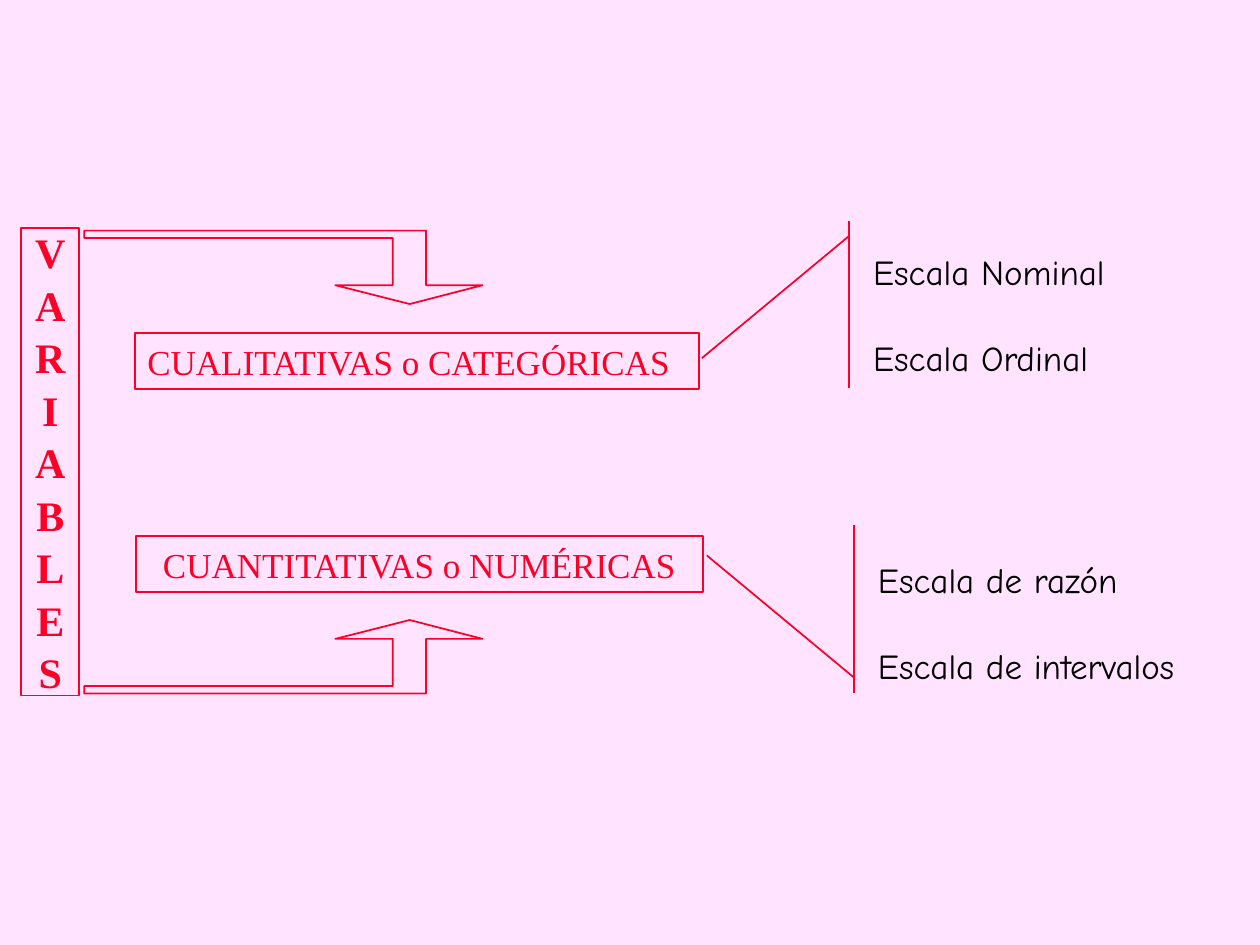
"""Builds a slide that sorts variables by kind and measurement scale."""
from pptx import Presentation
from pptx.dml.color import RGBColor
from pptx.enum.shapes import MSO_SHAPE as Preset
from pptx.enum.text import MSO_ANCHOR as Anchor, PP_ALIGN as Align
from pptx.util import Cm, Pt

COLORS = {"background": "FFE3FF", "red": "FC0128", "black": "000000"}
SERIF = "Times New Roman"
SCRIPT = "Comic Neue"


def color(name):
    return RGBColor.from_string(COLORS[name])


def outline(shape):
    shape.shadow.inherit = False
    shape.fill.background()
    shape.line.color.rgb = color("red")
    shape.line.width = Pt(1)


def add_outlined(slide, preset, box):
    shape = slide.shapes.add_shape(preset, *(Cm(length) for length in box))
    outline(shape)
    return shape


def write(shape, lines, font, size, ink, align, bold=False, gap=0):
    frame = shape.text_frame
    for index, line in enumerate(lines):
        paragraph = frame.paragraphs[0] if index == 0 else frame.add_paragraph()
        paragraph.alignment = align
        paragraph.space_before = Pt(gap if index else 0)
        run = paragraph.add_run()
        run.text = line
        run.font.name = font
        run.font.size = Pt(size)
        run.font.bold = bold
        run.font.color.rgb = color(ink)


def add_box(slide, box, lines, size, align, bold=False, gap=0):
    shape = add_outlined(slide, Preset.RECTANGLE, box)
    shape.text_frame.word_wrap = False
    shape.text_frame.vertical_anchor = Anchor.MIDDLE
    write(shape, lines, SERIF, size, "red", align, bold, gap)


def add_callout(slide, box, adjustments, inset, lines):
    shape = add_outlined(slide, Preset.LINE_CALLOUT_1_ACCENT_BAR, box)
    for index, value in enumerate(adjustments):
        shape.adjustments[index] = value
    frame = shape.text_frame
    frame.word_wrap = True
    frame.vertical_anchor = Anchor.TOP
    frame.margin_top = Cm(inset)
    write(shape, lines, SCRIPT, 20, "black", Align.JUSTIFY, gap=25)


def add_bent_arrow(slide, tip, direction):
    """Draws an elbow arrow from its tip; direction 1 points up, -1 down."""
    offsets = [(8.26, 0), (6.76, 0.38), (7.92, 0.38), (7.92, 1.33), (1.7, 1.33),
               (1.7, 1.48), (8.59, 1.48), (8.59, 0.38), (9.73, 0.38)]
    points = [(Cm(x), Cm(tip + direction * y)) for x, y in offsets]
    builder = slide.shapes.build_freeform(*points[0])
    builder.add_line_segments(points[1:], close=True)
    outline(builder.convert_to_shape())


def main():
    presentation = Presentation()
    presentation.slide_width, presentation.slide_height = Cm(25.4), Cm(19.05)
    slide = presentation.slides.add_slide(presentation.slide_layouts[6])
    slide.background.fill.solid()
    slide.background.fill.fore_color.rgb = color("background")

    add_bent_arrow(slide, 12.5, 1)
    add_box(slide, (0.43, 4.6, 1.17, 9.42), "VARIABLES", 24, Align.CENTER,
            bold=True, gap=1.2)
    add_box(slide, (2.72, 6.71, 11.38, 1.14), ["CUALITATIVAS o CATEGÓRICAS"],
            20, Align.LEFT)
    add_box(slide, (2.74, 10.8, 11.43, 1.14), ["CUANTITATIVAS o NUMÉRICAS"],
            20, Align.CENTER)
    add_bent_arrow(slide, 6.13, -1)
    add_callout(slide, (17.35, 4.45, 7.62, 3.38), (0.09, -0.03, 0.82, -0.42),
                0.61, ["Escala Nominal", "Escala Ordinal"])
    add_callout(slide, (17.45, 10.59, 7.62, 3.38), (0.91, -0.03, 0.18, -0.42),
                0.67, ["Escala de razón", "Escala de intervalos"])
    presentation.save("out.pptx")


if __name__ == "__main__":
    main()
